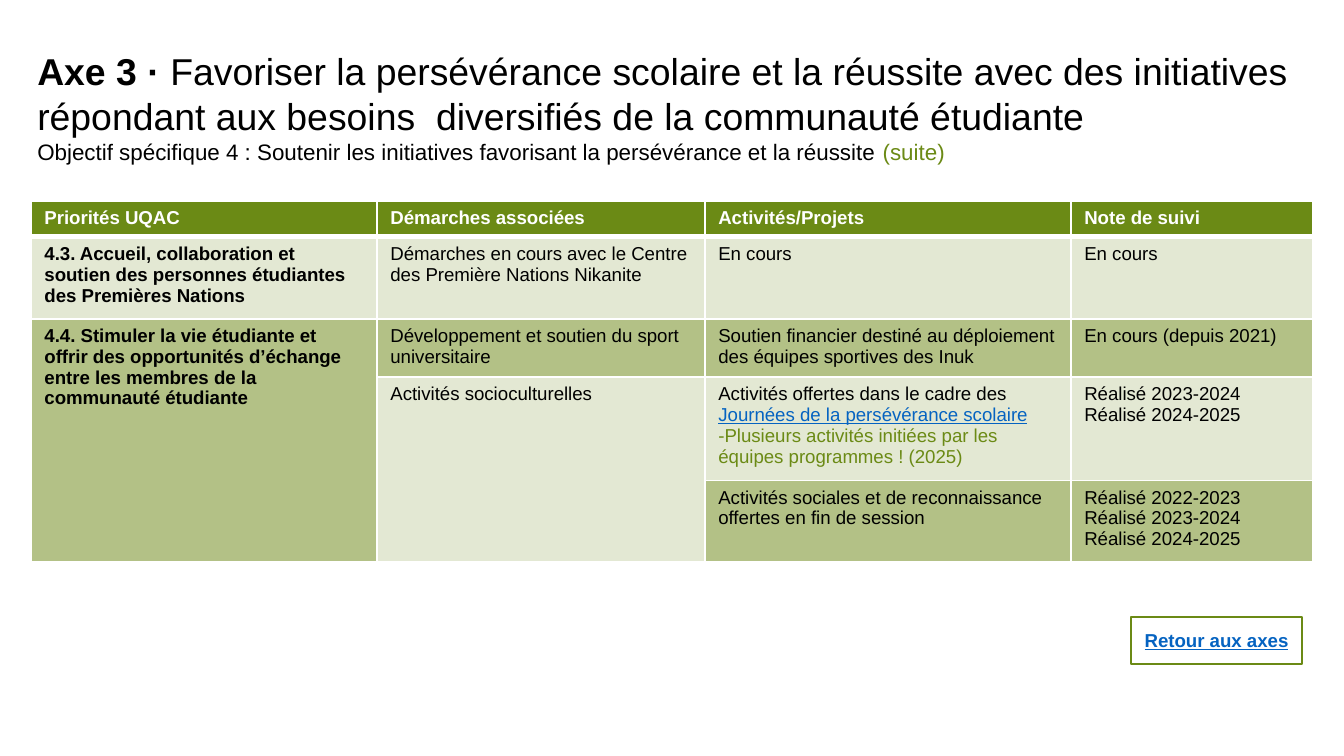
from lxml import etree
from pptx import Presentation, util as u
from pptx.dml.color import RGBColor
from pptx.enum import shapes, text
from pptx.oxml import ns

PX = 914400 / 134.4
GREEN = RGBColor(0x6B, 0x8A, 0x15)
PALE = RGBColor(0xE3, 0xE8, 0xD3)
OLIVE = RGBColor(0xB3, 0xC1, 0x86)
LINK = RGBColor(0x05, 0x63, 0xC1)
BLACK = RGBColor(0, 0, 0)
WHITE = RGBColor(255, 255, 255)


def px(*lengths):
    return [u.Emu(round(length * PX)) for length in lengths]


def write(frame, *paragraphs, align=text.PP_ALIGN.LEFT, **base):
    """Each paragraph is a string or a list of (string, format changes)."""
    frame.word_wrap = True
    for i, content in enumerate(paragraphs):
        paragraph = frame.paragraphs[0] if i == 0 else frame.add_paragraph()
        paragraph.alignment = align
        for words, changes in [(content, {})] if isinstance(content, str) else content:
            look = {"size": 10, "color": BLACK, "bold": False, "underline": False, **base, **changes}
            run = paragraph.add_run()
            run.text = words
            run.font.name = "Arial"
            run.font.size = u.Pt(look["size"])
            run.font.bold = look["bold"]
            run.font.underline = look["underline"]
            run.font.color.rgb = look["color"]


deck = Presentation()
deck.slide_width, deck.slide_height = px(1344, 756)
slide = deck.slides.add_slide(deck.slide_layouts[6])

# Title and objective
heading = slide.shapes.add_textbox(*px(24, 42, 1290, 136))
write(
    heading.text_frame,
    [("Axe 3 · ", {"bold": True}),
     ("Favoriser la persévérance scolaire et la réussite avec des initiatives "
      "répondant aux besoins  diversifiés de la communauté étudiante", {})],
    [("Objectif spécifique 4 : Soutenir les initiatives favorisant la persévérance et la réussite",
      {"size": 12}),
     (" (suite)", {"size": 12, "color": GREEN})],
    size=20,
)

# Follow-up table: each cell is a list of paragraphs, None is covered by a merge
rows = [
    [["Priorités UQAC"], ["Démarches associées"], ["Activités/Projets"], ["Note de suivi"]],
    [["4.3. Accueil, collaboration et soutien des personnes étudiantes des Premières Nations"],
     ["Démarches en cours avec le Centre des Première Nations Nikanite"],
     ["En cours"], ["En cours"]],
    [["4.4. Stimuler la vie étudiante et offrir des opportunités d’échange "
      "entre les membres de la communauté étudiante"],
     ["Développement et soutien du sport universitaire"],
     ["Soutien financier destiné au déploiement des équipes sportives des Inuk"],
     ["En cours (depuis 2021)"]],
    [None, ["Activités socioculturelles"],
     [[("Activités offertes dans le cadre des ", {}),
       ("Journées de la persévérance scolaire", {"color": LINK, "underline": True})],
      [("-Plusieurs activités initiées par les équipes programmes ! (2025)", {"color": GREEN})]],
     ["Réalisé 2023-2024", "Réalisé 2024-2025"]],
    [None, None,
     ["Activités sociales et de reconnaissance offertes en fin de session"],
     ["Réalisé 2022-2023", "Réalisé 2023-2024", "Réalisé 2024-2025"]],
]
column_widths = [346, 328, 366, 242]
row_heights = [35, 82, 58, 103, 81]
follow_up = slide.shapes.add_table(
    len(rows), len(column_widths),
    *px(31, 201, sum(column_widths), sum(row_heights))).table
for column, width in zip(follow_up.columns, px(*column_widths)):
    column.width = width
for row, height in zip(follow_up.rows, px(*row_heights)):
    row.height = height
follow_up.cell(2, 0).merge(follow_up.cell(4, 0))
follow_up.cell(3, 1).merge(follow_up.cell(4, 1))

for r, row in enumerate(rows):
    for c, paragraphs in enumerate(row):
        cell = follow_up.cell(r, c)
        # White borders, thicker under the header
        properties = cell._tc.get_or_add_tcPr()
        for side in ("lnL", "lnR", "lnT", "lnB"):
            thick = (r, side) in ((0, "lnB"), (1, "lnT"))
            border = etree.SubElement(properties, ns.qn("a:" + side), w=str(u.Pt(3 if thick else 1)))
            paint = etree.SubElement(border, ns.qn("a:solidFill"))
            etree.SubElement(paint, ns.qn("a:srgbClr"), val=str(WHITE))
        cell.fill.solid()
        cell.fill.fore_color.rgb = GREEN if r == 0 else PALE if r % 2 else OLIVE
        if paragraphs:
            write(cell.text_frame, *paragraphs, bold=r == 0 or c == 0,
                  color=WHITE if r == 0 else BLACK)

# Button back to the list of axes
back_button = slide.shapes.add_shape(shapes.MSO_SHAPE.RECTANGLE, *px(1131, 617, 171, 47))
back_button.shadow.inherit = False
back_button.fill.solid()
back_button.fill.fore_color.rgb = WHITE
back_button.line.color.rgb = GREEN
back_button.line.width = u.Pt(1)
back_button.text_frame.vertical_anchor = text.MSO_ANCHOR.MIDDLE
write(back_button.text_frame, "Retour aux axes", align=text.PP_ALIGN.CENTER,
      color=LINK, bold=True, underline=True)

deck.save("out.pptx")
